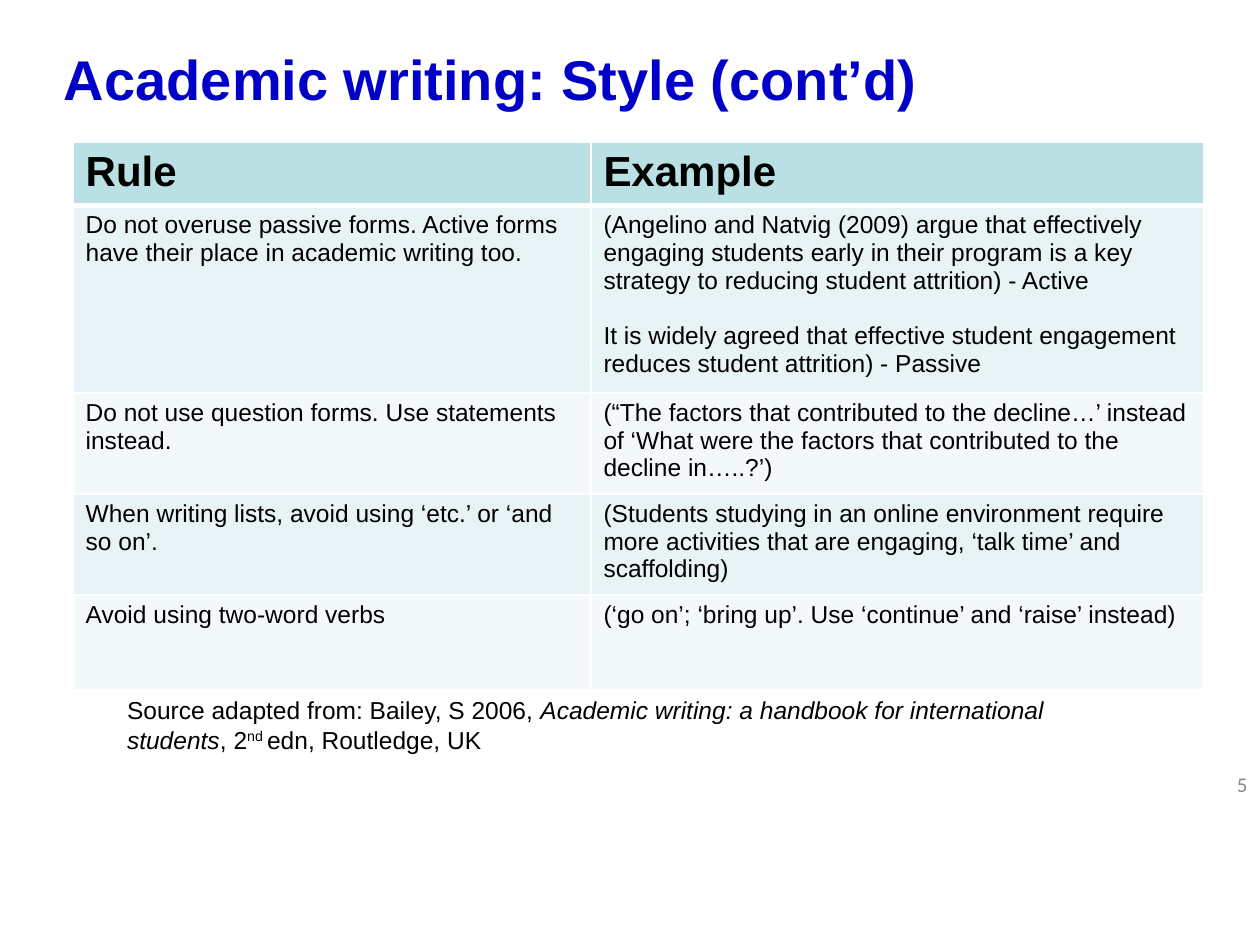
from dataclasses import dataclass

from lxml import etree
from pptx import Presentation
from pptx.dml.color import RGBColor
from pptx.enum import text
from pptx.oxml import ns
from pptx import util as u

COLORS = {
    "title": "0000C8",
    "ink": "000000",
    "number": "898989",
    "header": "BBE0E3",
    "odd": "E7F3F4",
    "even": "F3F9FA",
    "grid": "FFFFFF",
}


@dataclass
class Span:
    words: str
    size: float = 14
    color: str = "ink"
    font: str = "Arial"
    bold: bool = False
    italic: bool = False
    raised: bool = False


@dataclass
class Rule:
    advice: str
    examples: list[str]
    height: float = 0.75


RULES = [
    Rule("Do not overuse passive forms. Active forms have their place in academic writing too.",
         ["(Angelino and Natvig (2009) argue that effectively engaging students early in "
          "their program is a key strategy to reducing student attrition) - Active",
          "It is widely agreed that effective student engagement reduces student "
          "attrition) - Passive"], 1.41),
    Rule("Do not use question forms. Use statements instead.",
         ["(“The factors that contributed to the decline…’ instead of ‘What were the "
          "factors that contributed to the decline in…..?’)"]),
    Rule("When writing lists, avoid using ‘etc.’ or ‘and so on’.",
         ["(Students studying in an online environment require more activities that are "
          "engaging, ‘talk time’ and scaffolding)"]),
    Rule("Avoid using two-word verbs",
         ["(‘go on’; ‘bring up’. Use ‘continue’ and ‘raise’ instead)"]),
]


def add_span(para, span: Span) -> None:
    run = para.add_run()
    run.text = span.words
    font = run.font
    font.name, font.size = span.font, u.Pt(span.size)
    font.bold, font.italic = span.bold, span.italic
    font.color.rgb = RGBColor.from_string(COLORS[span.color])
    if span.raised:
        run._r.get_or_add_rPr().set("baseline", "30000")


def add_text(page, left: float, top: float, width: float, height: float,
             spans: list[Span], align=text.PP_ALIGN.LEFT,
             anchor=text.MSO_ANCHOR.TOP) -> None:
    box = page.shapes.add_textbox(*map(u.Inches, (left, top, width, height)))
    frame = box.text_frame
    frame.word_wrap = True
    frame.vertical_anchor = anchor
    para = frame.paragraphs[0]
    para.alignment = align
    for span in spans:
        add_span(para, span)


def set_borders(cell, top: float, bottom: float) -> None:
    properties = cell._tc.get_or_add_tcPr()
    for side, points in (("L", 1), ("R", 1), ("T", top), ("B", bottom)):
        line = etree.SubElement(properties, ns.qn(f"a:ln{side}"), w=str(u.Pt(points)))
        fill = etree.SubElement(line, ns.qn("a:solidFill"))
        etree.SubElement(fill, ns.qn("a:srgbClr"), val=COLORS["grid"])


def fill_cell(cell, spans: list[Span], fill: str, top: float = 1, bottom: float = 1) -> None:
    """Write one paragraph per span, parted by the height of one line."""
    set_borders(cell, top, bottom)
    cell.fill.solid()
    cell.fill.fore_color.rgb = RGBColor.from_string(COLORS[fill])
    frame = cell.text_frame
    for index, span in enumerate(spans):
        para = frame.add_paragraph() if index else frame.paragraphs[0]
        if index:
            para.space_before = u.Pt(16)
        add_span(para, span)


def add_rules(page) -> None:
    widths = (4.11, 4.86)
    heights = [0.46] + [rule.height for rule in RULES]
    frame = page.shapes.add_table(
        len(heights), len(widths), u.Inches(0.58), u.Inches(1.13),
        u.Inches(sum(widths)), u.Inches(sum(heights)))
    table = frame.table
    table.first_row = table.horz_banding = False
    for column, width in zip(table.columns, widths):
        column.width = u.Inches(width)
    for row, height in zip(table.rows, heights):
        row.height = u.Inches(height)

    # Header row
    for column, heading in enumerate(("Rule", "Example")):
        fill_cell(table.cell(0, column), [Span(heading, 24, bold=True)], "header", bottom=3)

    # Banded rows
    for row, rule in enumerate(RULES, start=1):
        fill = "odd" if row % 2 else "even"
        for column, words in enumerate(([rule.advice], rule.examples)):
            fill_cell(table.cell(row, column), [Span(part) for part in words], fill,
                      top=3 if row == 1 else 1)


def main() -> None:
    deck = Presentation()
    deck.slide_width, deck.slide_height = u.Inches(10), u.Inches(7.5)
    page = deck.slides.add_slide(deck.slide_layouts[6])

    # Title
    add_text(page, 0.41, 0.3, 9.17, 0.71,
             [Span("Academic writing: Style (cont’d)", 32, "title", bold=True)])

    # Page number
    add_text(page, 7.67, 6.02, 2.33, 0.4, [Span("5", 12, "number", "Calibri")],
             text.PP_ALIGN.RIGHT, text.MSO_ANCHOR.MIDDLE)

    add_rules(page)

    # Source
    add_text(page, 0.91, 5.47, 8.11, 0.57, [
        Span("Source adapted from: Bailey, S 2006, "),
        Span("Academic writing: a handbook for international students", italic=True),
        Span(", 2"),
        Span("nd ", raised=True),
        Span("edn, Routledge, UK"),
    ])

    deck.save("out.pptx")


if __name__ == "__main__":
    main()
